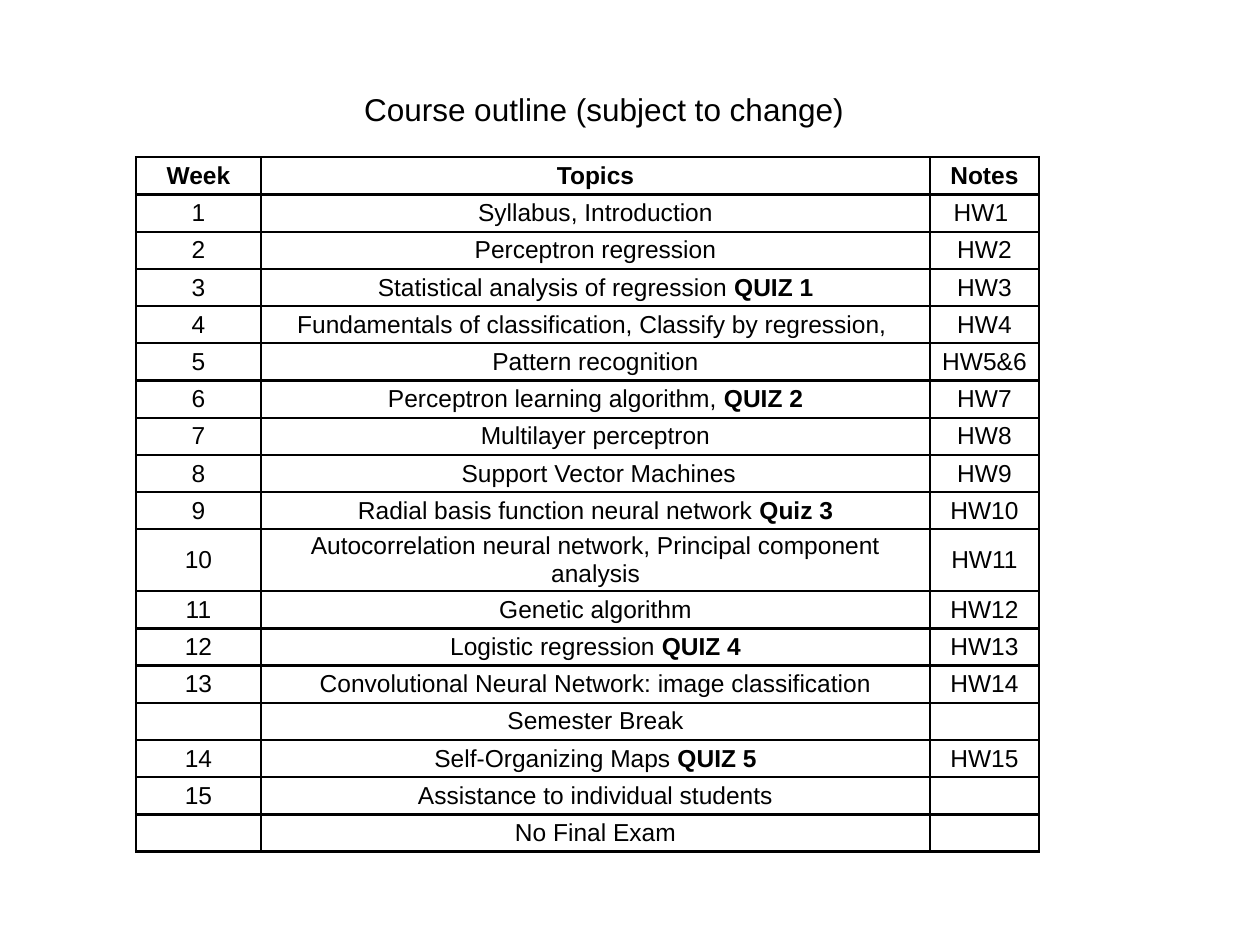
from lxml.etree import SubElement
from pptx import Presentation
from pptx.dml.color import RGBColor
from pptx.enum.text import MSO_ANCHOR as Anchor, PP_ALIGN as Align
from pptx.oxml.ns import qn
from pptx.util import Cm, Pt

BLACK = RGBColor(0, 0, 0)
FONT = "Arial"
CELL_SIZE = 14
THIN, THICK = 1, 1.5
COL_WIDTHS = (2.52, 13.49, 2.19)
ROW_HEIGHT = 0.75

SCHEDULE = [
    ("Week", "Topics", "", "Notes"),
    ("1", "Syllabus, Introduction", "", "HW1 "),
    ("2", "Perceptron regression", "", "HW2"),
    ("3", "Statistical analysis of regression ", "QUIZ 1", "HW3"),
    ("4", "Fundamentals of classification, Classify by regression, ", "", "HW4"),
    ("5", "Pattern recognition", "", "HW5&6"),
    ("6", "Perceptron learning algorithm, ", "QUIZ 2", "HW7"),
    ("7", "Multilayer perceptron", "", "HW8"),
    ("8", " Support Vector Machines", "", "HW9"),
    ("9", "Radial basis function neural network ", "Quiz 3", "HW10"),
    ("10", "Autocorrelation neural network, Principal component analysis", "", "HW11"),
    ("11", "Genetic algorithm", "", "HW12"),
    ("12", "Logistic regression ", "QUIZ 4", "HW13"),
    ("13", "Convolutional Neural Network: image classification", "", "HW14"),
    ("", "Semester Break", "", ""),
    ("14", "Self-Organizing Maps ", "QUIZ 5", "HW15"),
    ("15", "Assistance to individual students", "", ""),
    ("", "No Final Exam", "", ""),
]


def add_run(p, text, size, bold=False):
    r = p.add_run()
    r.text = text
    r.font.name = FONT
    r.font.size = Pt(size)
    r.font.bold = bold
    r.font.color.rgb = BLACK


def add_title(s, text):
    sp = s.shapes.add_textbox(Cm(7.09), Cm(1.7), Cm(11.73), Cm(1.02))
    tf = sp.text_frame
    tf.word_wrap = True
    add_run(tf.paragraphs[0], text, 18)


def set_borders(cell, left, right):
    tc_pr = cell._tc.get_or_add_tcPr()
    for side, width in zip("LRTB", (left, right, THICK, THICK)):
        ln = SubElement(tc_pr, qn(f"a:ln{side}"), w=str(Pt(width)))
        fill = SubElement(ln, qn("a:solidFill"))
        SubElement(fill, qn("a:srgbClr"), val=str(BLACK))


def fill_cell(cell, text, quiz, bold):
    cell.vertical_anchor = Anchor.MIDDLE
    cell.margin_left = cell.margin_right = Cm(0.05)
    cell.margin_top = cell.margin_bottom = Cm(0.03)
    p = cell.text_frame.paragraphs[0]
    p.alignment = Align.CENTER
    if text:
        add_run(p, text, CELL_SIZE, bold)
    else:
        SubElement(p._p, qn("a:endParaRPr"), sz=str(CELL_SIZE * 100))
    if quiz:
        add_run(p, quiz, CELL_SIZE, True)


def add_schedule(s):
    rows, cols = len(SCHEDULE), len(COL_WIDTHS)
    table = s.shapes.add_table(
        rows, cols, Cm(2.74), Cm(3.17),
        Cm(sum(COL_WIDTHS)), Cm(rows * ROW_HEIGHT)).table
    table.first_row = table.horz_banding = False
    for col, width in zip(table.columns, COL_WIDTHS):
        col.width = Cm(width)
    for i, (week, topic, quiz, note) in enumerate(SCHEDULE):
        table.rows[i].height = Cm(ROW_HEIGHT)
        for j, (text, extra) in enumerate(((week, ""), (topic, quiz), (note, ""))):
            cell = table.cell(i, j)
            fill_cell(cell, text, extra, bold=i == 0)
            set_borders(cell, THICK if j == 0 else THIN,
                        THICK if j == cols - 1 else THIN)
            cell.fill.background()


def main():
    prs = Presentation()
    prs.slide_width, prs.slide_height = Cm(25.4), Cm(19.05)
    s = prs.slides.add_slide(prs.slide_layouts[6])
    add_title(s, "Course outline (subject to change)")
    add_schedule(s)
    prs.save("out.pptx")


if __name__ == "__main__":
    main()
